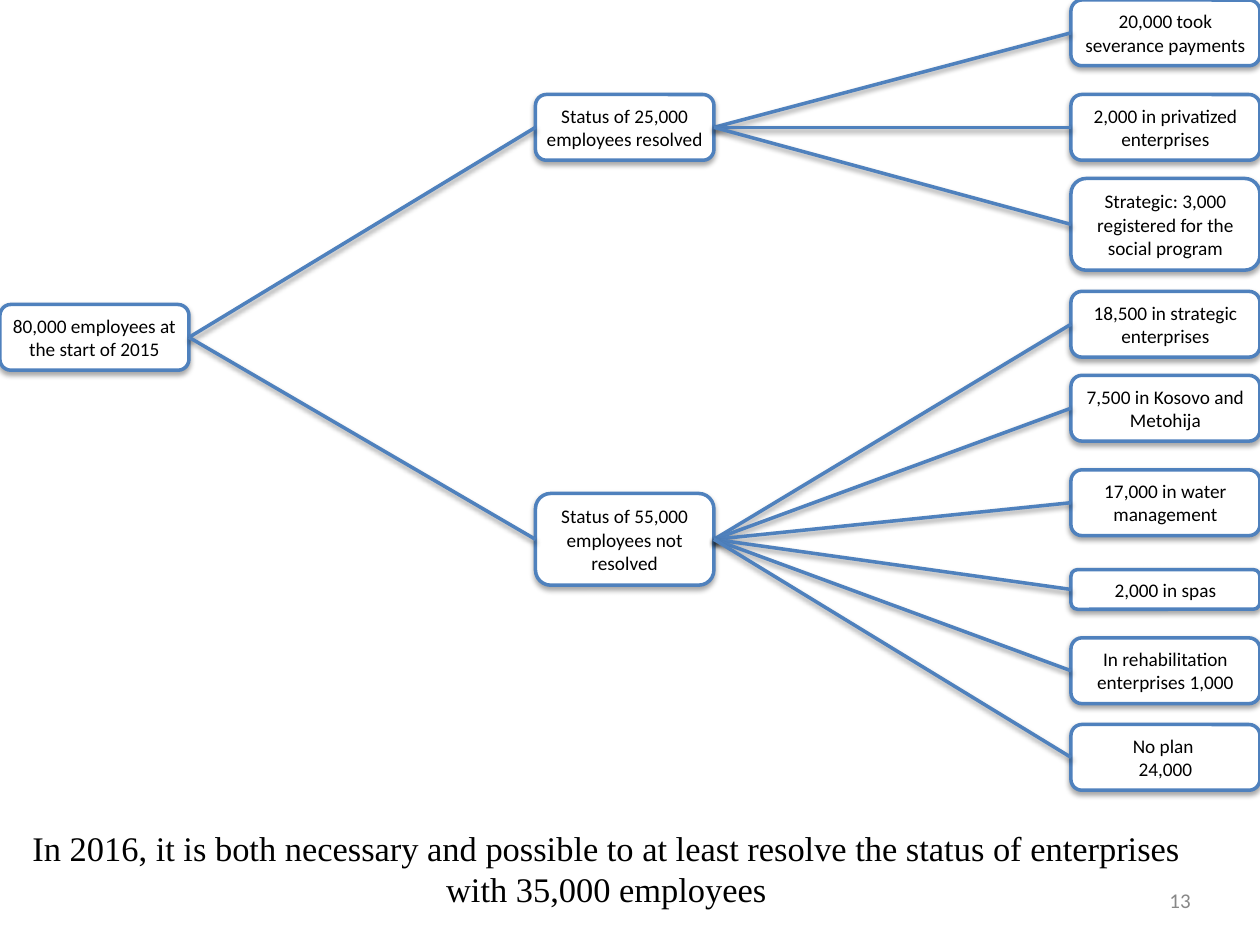
from dataclasses import dataclass

from lxml import etree
from pptx import Presentation
from pptx.dml.color import RGBColor
from pptx.enum.shapes import MSO_CONNECTOR, MSO_SHAPE
from pptx.enum.text import MSO_ANCHOR, MSO_AUTO_SIZE, PP_ALIGN
from pptx.oxml.ns import qn
from pptx.util import Inches, Pt

ROUNDED = MSO_SHAPE.ROUNDED_RECTANGLE
STRAIGHT = MSO_CONNECTOR.STRAIGHT
MIDDLE = MSO_ANCHOR.MIDDLE
CENTER, RIGHT = PP_ALIGN.CENTER, PP_ALIGN.RIGHT
GROW, FIXED = MSO_AUTO_SIZE.SHAPE_TO_FIT_TEXT, MSO_AUTO_SIZE.NONE
TITLE_ONLY = 5
COLS, ROWS = 120, 90
SLIDE_W, SLIDE_H = Inches(10), Inches(7.5)


@dataclass(frozen=True)
class Theme:
    accent: str = "4F81BD"
    paper: str = "FFFFFF"
    ink: str = "000000"
    muted: str = "888888"
    body_font: str = "Calibri"
    title_font: str = "Times New Roman"
    node_size: float = 11
    number_size: float = 12
    title_size: float = 19.7
    line_width: float = 2
    inset: float = 0.05


@dataclass(frozen=True)
class Shadow:
    opacity: int
    distance: float
    blur: float = 3


@dataclass(frozen=True)
class Level:
    left: float
    width: float


@dataclass(frozen=True)
class Node:
    text: str
    top: float
    lines: int = 2
    children: tuple = ()

    @property
    def height(self) -> float:
        return 1.3 + 2.48 * self.lines

    @property
    def middle(self) -> float:
        return self.top + self.height / 2


THEME = Theme()
BOX_SHADOW = Shadow(opacity=35, distance=1.8)
LINE_SHADOW = Shadow(opacity=38, distance=1.6)
LEVELS = (Level(0, 18), Level(51, 17), Level(102, 18))

TREE = Node("80,000 employees at the start of 2015", 29, children=(
    Node("Status of 25,000 employees resolved", 9, children=(
        Node("20,000 took severance payments", 0),
        Node("2,000 in privatized enterprises", 9),
        Node("Strategic: 3,000 registered for the social program", 17, 3),
    )),
    Node("Status of 55,000 employees not resolved", 47, 3, (
        Node("18,500 in strategic enterprises", 27.75),
        Node("7,500 in Kosovo and Metohija", 35.75),
        Node("17,000 in water management", 44.75),
        Node("2,000 in spas", 54.25, 1),
        Node("In rehabilitation enterprises 1,000", 60.75),
        Node("No plan \n24,000", 69),
    )),
))


def x(cols: float) -> int:
    return round(SLIDE_W * cols / COLS)


def y(rows: float) -> int:
    return round(SLIDE_H * rows / ROWS)


def rgb(value: str) -> RGBColor:
    return RGBColor.from_string(value)


def add_shadow(sp, shadow: Shadow) -> None:
    effects = etree.SubElement(sp._element.spPr, qn("a:effectLst"))
    outer = etree.SubElement(
        effects, qn("a:outerShdw"), blurRad=str(Pt(shadow.blur)),
        dist=str(Pt(shadow.distance)), dir="5400000", rotWithShape="0")
    color = etree.SubElement(outer, qn("a:srgbClr"), val=THEME.ink)
    etree.SubElement(color, qn("a:alpha"), val=str(shadow.opacity * 1000))


def style_line(line) -> None:
    line.color.rgb = rgb(THEME.accent)
    line.width = Pt(THEME.line_width)


def set_text(sp, text: str, font: str, size: float, color: str,
             align=CENTER, wrap: bool = True, fit=GROW) -> None:
    tf = sp.text_frame
    tf.text = text
    tf.word_wrap = wrap
    tf.auto_size = fit
    tf.vertical_anchor = MIDDLE
    tf.margin_left = tf.margin_right = Inches(THEME.inset)
    tf.margin_top = tf.margin_bottom = Inches(THEME.inset)
    for p in tf.paragraphs:
        p.alignment = align
        for r in p.runs:
            r.font.name = font
            r.font.size = Pt(size)
            r.font.color.rgb = rgb(color)


def draw_node(shapes, node: Node, level: Level):
    sp = shapes.add_shape(ROUNDED, x(level.left), y(node.top),
                          x(level.width), y(node.height))
    sp.fill.solid()
    sp.fill.fore_color.rgb = rgb(THEME.paper)
    style_line(sp.line)
    add_shadow(sp, BOX_SHADOW)
    set_text(sp, node.text, THEME.body_font, THEME.node_size, THEME.ink)
    return sp


def draw_link(shapes, parent: Node, child: Node, depth: int, start, end) -> None:
    source, target = LEVELS[depth], LEVELS[depth + 1]
    line = shapes.add_connector(
        STRAIGHT, x(source.left + source.width), y(parent.middle),
        x(target.left), y(child.middle))
    line.begin_connect(start, 3)
    line.end_connect(end, 1)
    style_line(line.line)
    add_shadow(line, LINE_SHADOW)


def draw_tree(shapes, node: Node, depth: int = 0):
    sp = draw_node(shapes, node, LEVELS[depth])
    for child in node.children:
        child_sp = draw_tree(shapes, child, depth + 1)
        draw_link(shapes, node, child, depth, sp, child_sp)
    return sp


def main() -> None:
    prs = Presentation()
    prs.slide_width, prs.slide_height = SLIDE_W, SLIDE_H
    shapes = prs.slides.add_slide(prs.slide_layouts[TITLE_ONLY]).shapes

    title = shapes.title
    title.left, title.top = x(0.1), y(79.45)
    title.width, title.height = x(115.3), y(6.5)
    set_text(title, "In 2016, it is both necessary and possible to at least "
             "resolve the status of enterprises with 35,000 employees",
             THEME.title_font, THEME.title_size, THEME.ink, fit=FIXED)

    number = shapes.add_textbox(x(110.5), y(84), x(3.5), y(3.5))
    set_text(number, "13", THEME.body_font, THEME.number_size, THEME.muted,
             align=RIGHT, wrap=False)

    draw_tree(shapes, TREE)
    prs.save("out.pptx")


if __name__ == "__main__":
    main()
